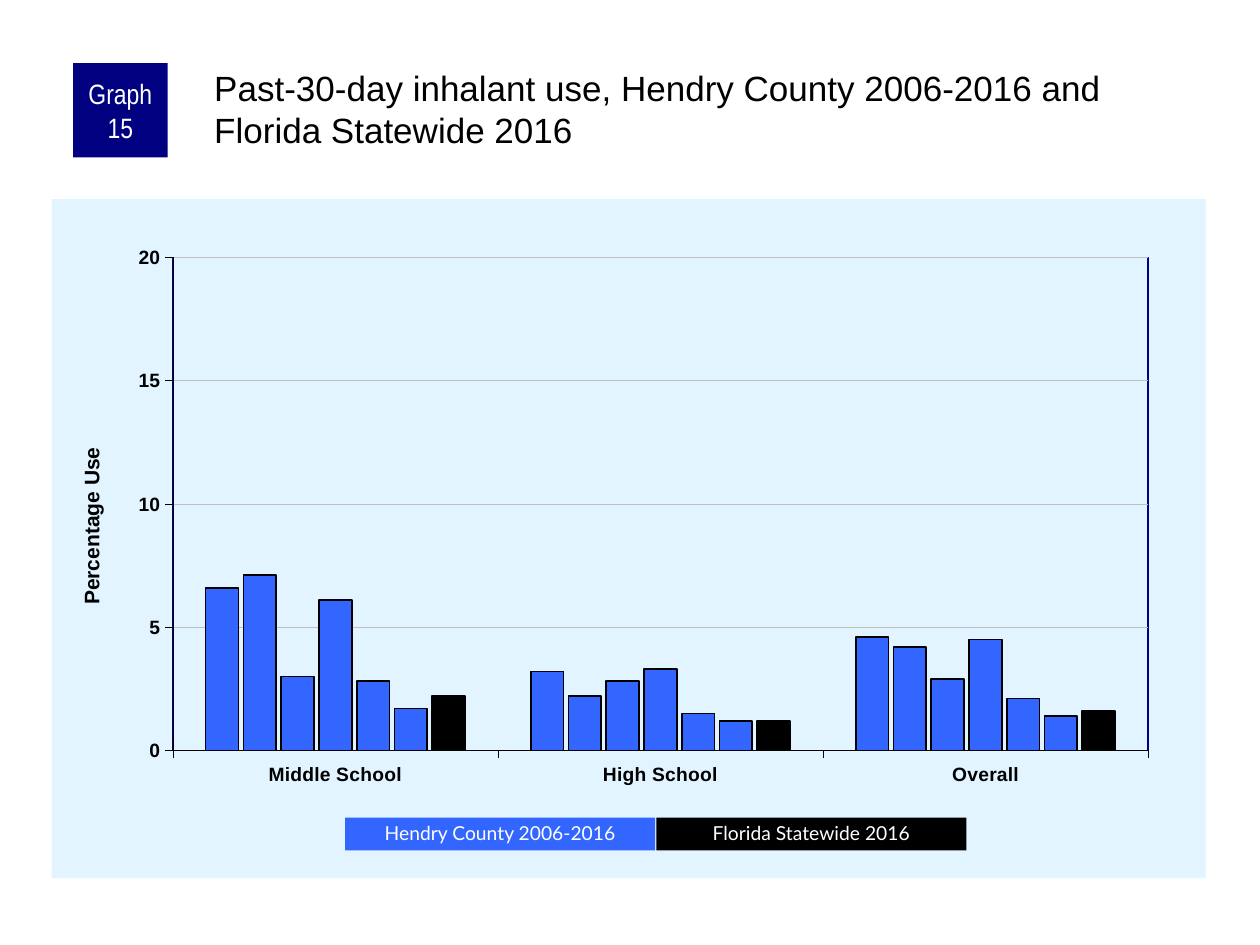
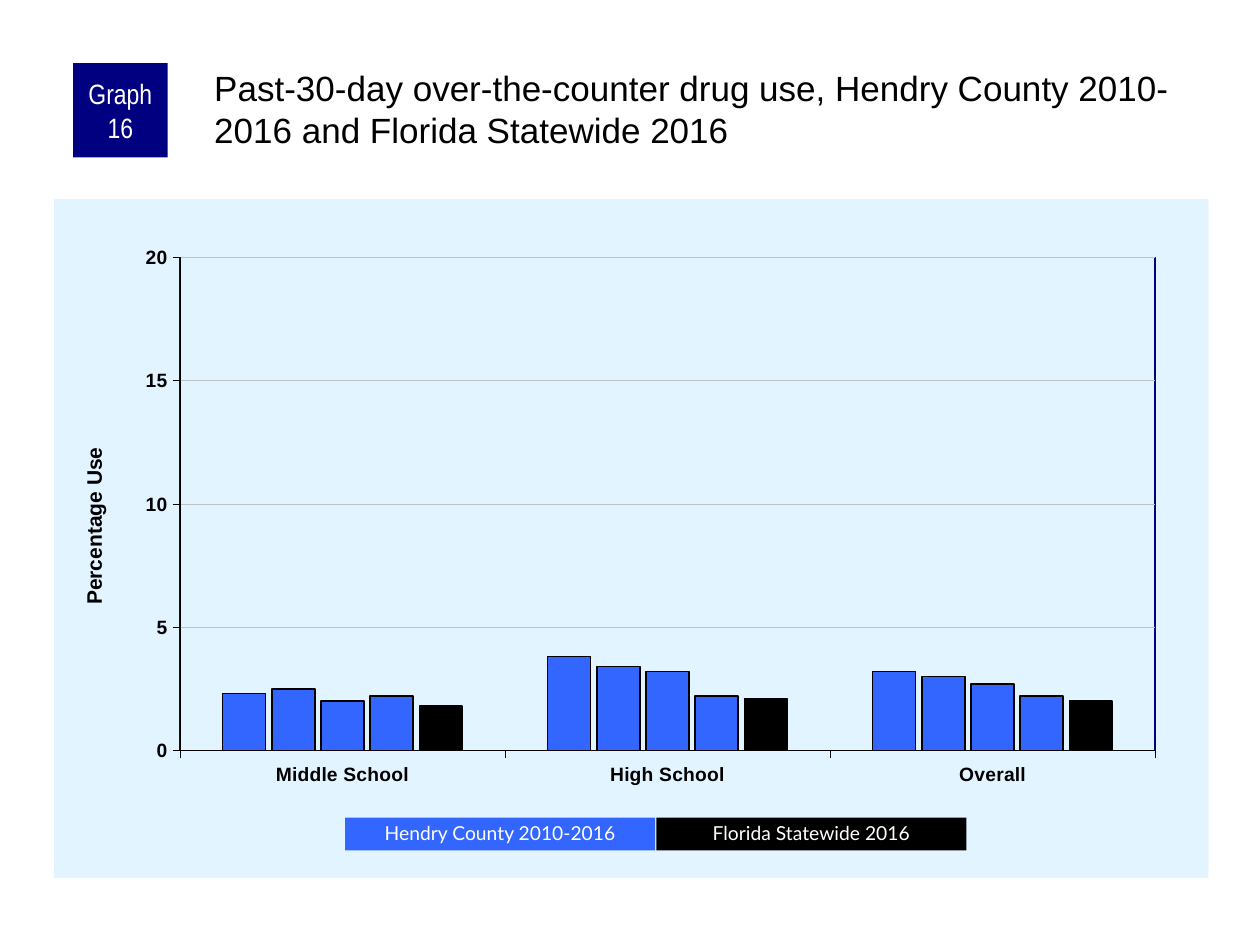
"""Build two survey graph slides with a shared layout."""
from dataclasses import dataclass

from pptx import Presentation
from pptx.chart.data import CategoryChartData
from pptx.dml.color import RGBColor
from pptx.enum.chart import XL_CHART_TYPE, XL_TICK_MARK
from pptx.enum.shapes import MSO_SHAPE
from pptx.enum.text import MSO_ANCHOR, PP_ALIGN
from pptx.oxml import parse_xml
from pptx.oxml.ns import nsdecls, qn
from pptx.util import Inches, Pt

COLUMN = XL_CHART_TYPE.COLUMN_CLUSTERED
TICK_OUT, TICK_NONE = XL_TICK_MARK.OUTSIDE, XL_TICK_MARK.NONE
RECT = MSO_SHAPE.RECTANGLE
MIDDLE, TOP = MSO_ANCHOR.MIDDLE, MSO_ANCHOR.TOP
CENTER, LEFT = PP_ALIGN.CENTER, PP_ALIGN.LEFT

BLACK, WHITE, NAVY = "000000", "FFFFFF", "000080"
BLUE, PANEL, GRID = "3366FF", "E1F4FF", "C0C0C0"
SCHOOLS = ("Middle School", "High School", "Overall")
STATE = "Florida Statewide 2016"
KEY_WIDTH, KEY_STEP = 2.46, 2.47


@dataclass(frozen=True)
class Graph:
    """One graph slide; each row of values is a survey year."""
    number: int
    topic: str
    county: str
    left: float
    plot_x: float
    first_line: float
    rows: tuple


GRAPHS = (
    Graph(15, "inhalant use", "Hendry County 2006-2016", 0.41, 0.105, 1, (
        (6.6, 3.2, 4.6), (7.1, 2.2, 4.2), (3, 2.8, 2.9), (6.1, 3.3, 4.5),
        (2.8, 1.5, 2.1), (1.7, 1.2, 1.4), (2.2, 1.2, 1.6))),
    Graph(16, "over-the-counter drug use", "Hendry County 2010-2016", 0.43, 0.109, 0.75, (
        (2.3, 3.8, 3.2), (2.5, 3.4, 3), (2, 3.2, 2.7), (2.2, 2.2, 2.2),
        (1.8, 2.1, 2))),
)


def rgb(color: str) -> RGBColor:
    """Turn a hex string into a colour."""
    return RGBColor.from_string(color)


def set_font(font, size: float, color: str = BLACK, name: str = "Arial",
             bold: bool = False) -> None:
    """Format a font."""
    font.size, font.name, font.bold = Pt(size), name, bold
    font.color.rgb = rgb(color)


def set_line(line, color: str, width: float) -> None:
    """Format a line."""
    line.color.rgb = rgb(color)
    line.width = Pt(width)


def write(sp, text: str, size: float, color: str = BLACK, name: str = "Arial",
          align=LEFT, anchor=TOP, insets=(0.1, 0.05, 0.1, 0.05), spacing=None) -> None:
    """Put formatted text into a shape."""
    tf = sp.text_frame
    tf.word_wrap, tf.vertical_anchor = True, anchor
    tf.margin_left, tf.margin_top, tf.margin_right, tf.margin_bottom = map(Inches, insets)
    p = tf.paragraphs[0]
    p.alignment, p.line_spacing = align, spacing
    r = p.add_run()
    r.text = text
    set_font(r.font, size, color, name)


def add_box(s, box: tuple, fill: str):
    """Add a plain filled rectangle."""
    sp = s.shapes.add_shape(RECT, *map(Inches, box))
    sp.shadow.inherit = False
    sp.fill.solid()
    sp.fill.fore_color.rgb = rgb(fill)
    sp.line.fill.background()
    return sp


def set_layout(parent, inner: bool = False, **place: float) -> None:
    """Place a chart part by fractions of the chart area."""
    old = parent.find(qn("c:layout"))
    target = '<c:layoutTarget val="inner"/>' if inner else ""
    modes = "".join(f'<c:{k}Mode val="edge"/>' for k in ("x", "y"))
    values = "".join(f'<c:{k} val="{v}"/>' for k, v in place.items())
    new = parse_xml(f'<c:layout {nsdecls("c")}><c:manualLayout>{target}{modes}{values}'
                    '</c:manualLayout></c:layout>')
    if old is None:
        parent.insert(0, new)
    else:
        parent.replace(old, new)


def area_format(fill: str = "", line: str = ""):
    """Make the fill and 1 pt border of a chart area."""
    paint = [f'<a:solidFill><a:srgbClr val="{c}"/></a:solidFill>' if c else "<a:noFill/>"
             for c in (fill, line)]
    return parse_xml(f'<c:spPr {nsdecls("c", "a")}>{paint[0]}'
                     f'<a:ln w="{Pt(1)}">{paint[1]}</a:ln></c:spPr>')


def format_axes(chart) -> None:
    """Format both axes, the gridlines and the axis title."""
    for axis in (chart.category_axis, chart.value_axis):
        axis.major_tick_mark, axis.minor_tick_mark = TICK_OUT, TICK_NONE
        set_font(axis.tick_labels.font, 11, bold=True)
        set_line(axis.format.line, BLACK, 0.25)
    axis = chart.value_axis
    axis.minimum_scale, axis.maximum_scale, axis.major_unit = 0, 20, 5
    axis.has_major_gridlines = True
    set_line(axis.major_gridlines.format.line, GRID, 0.25)
    title = axis.axis_title
    p = title.text_frame.paragraphs[0]
    r = p.add_run()
    r.text = "Percentage Use"
    set_font(r.font, 12, bold=True)
    title.text_frame._txBody.bodyPr.set("rot", "-5400000")
    title.text_frame._txBody.bodyPr.set("vert", "horz")
    set_layout(title._element, x=0.02, y=0.36)


def add_graph(s, graph: Graph) -> None:
    """Add the column chart, with the state as its last series."""
    data = CategoryChartData()
    data.categories = SCHOOLS
    for i, row in enumerate(graph.rows, 1):
        data.add_series(f"Series {i}", row)
    box = map(Inches, (graph.left, 1.58, 9.16, 5.39))
    chart = s.shapes.add_chart(COLUMN, *box, data).chart
    chart.has_legend = chart.has_title = False
    set_font(chart.font, 8)
    plot = chart.plots[0]
    plot.gap_width, plot.overlap, plot.vary_by_categories = 200, -15, False
    for i, series in enumerate(plot.series):
        series.format.fill.solid()
        series.format.fill.fore_color.rgb = rgb(BLACK if i == len(graph.rows) - 1 else BLUE)
        set_line(series.format.line, BLACK, 1 if i else graph.first_line)
    format_axes(chart)
    body = chart.element.find(qn("c:chart"))
    body.addnext(area_format(fill=PANEL))
    area = body.find(qn("c:plotArea"))
    set_layout(area, inner=True, x=graph.plot_x, y=0.086, w=0.845, h=0.726)
    area.append(area_format(line=NAVY))


def add_slide(prs, graph: Graph) -> None:
    """Build one graph slide."""
    s = prs.slides.add_slide(prs.slide_layouts[6])
    add_graph(s, graph)
    badge = add_box(s, (0.58, 0.5, 0.75, 0.75), NAVY)
    write(badge, f"Graph {graph.number}", 16, WHITE, "Arial Narrow", align=CENTER,
          anchor=MIDDLE, insets=(0.05, 0, 0.05, 0))
    title = s.shapes.add_textbox(*map(Inches, (1.67, 0.5, 7.92, 0.83)))
    write(title, f"Past-30-day {graph.topic}, {graph.county} and {STATE}", 20,
          insets=(0.03, 0.03, 0, 0))
    for i, (label, fill) in enumerate(((graph.county, BLUE), (STATE, BLACK))):
        key = add_box(s, (2.74 + i * KEY_STEP, 6.49, KEY_WIDTH, 0.26), fill)
        write(key, label, 11, WHITE, "Lato", align=CENTER, anchor=MIDDLE, spacing=0.9)


def main() -> None:
    """Build and save the presentation."""
    prs = Presentation()
    prs.slide_width, prs.slide_height = Inches(10), Inches(7.5)
    for graph in GRAPHS:
        add_slide(prs, graph)
    prs.save("out.pptx")


if __name__ == "__main__":
    main()
